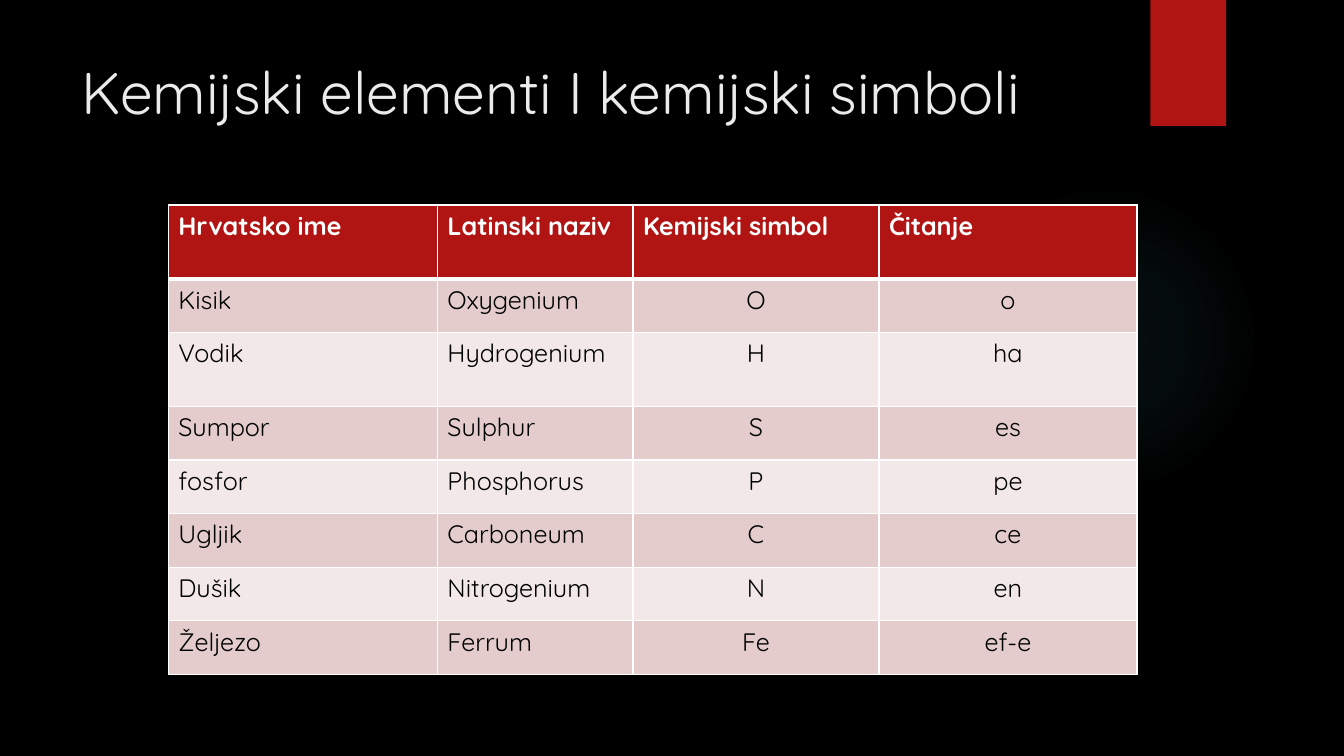
from typing import NamedTuple

from lxml import etree
from pptx import Presentation
from pptx import util as u
from pptx.dml.color import RGBColor
from pptx.enum import shapes, text
from pptx.oxml import ns

COLORS = {
    "background": "000000",
    "title": "EBEBEB",
    "accent": "B01513",
    "glow": "50B9C1",
    "white": "FFFFFF",
    "ink": "000000",
    "odd_row": "E4CCCC",
    "even_row": "F2E8E7",
}
FONT = "Quicksand"
COLUMN_WIDTHS = (192.25, 139.7, 175.7, 184.3)
TALL_ROW, ROW = 52.8, 38.3
TALL_ROWS = (0, 2)
CENTERED_COLUMNS = (2, 3)


class Element(NamedTuple):
    croatian: str
    latin: str
    symbol: str
    reading: str


HEADINGS = Element("Hrvatsko ime", "Latinski naziv", "Kemijski simbol", "Čitanje")
ELEMENTS = (
    Element("Kisik", "Oxygenium", "O", "o"),
    Element("Vodik", "Hydrogenium", "H", "ha"),
    Element("Sumpor", "Sulphur", "S", "es"),
    Element("fosfor", "Phosphorus", "P", "pe"),
    Element("Ugljik", "Carboneum", "C", "ce"),
    Element("Dušik", "Nitrogenium", "N", "en"),
    Element("Željezo", "Ferrum", "Fe", "ef-e"),
)


def color(name: str) -> RGBColor:
    return RGBColor.from_string(COLORS[name])


def add_node(parent, tag: str, **attributes):
    values = {key: str(value) for key, value in attributes.items()}
    return etree.SubElement(parent, ns.qn(tag), values)


def add_plain_shape(page, kind, left: float, top: float, width: float, height: float):
    box = page.shapes.add_shape(kind, u.Pt(left), u.Pt(top), u.Pt(width), u.Pt(height))
    box.shadow.inherit = False
    box.line.fill.background()
    return box


def add_glow(page) -> None:
    glow = add_plain_shape(page, shapes.MSO_SHAPE.OVAL, 677.5, 131.75, 221.75, 221.75)
    glow.fill.gradient()
    gradient = glow._element.spPr.find(ns.qn("a:gradFill"))
    for child in list(gradient):
        gradient.remove(child)
    stops = add_node(gradient, "a:gsLst")
    for position, opacity in ((0, 7), (36, 6), (69, 0)):
        stop = add_node(stops, "a:gs", pos=position * 1000)
        tint = add_node(stop, "a:srgbClr", val=COLORS["glow"])
        add_node(tint, "a:alpha", val=opacity * 1000)
    shade = add_node(gradient, "a:path", path="circle")
    add_node(shade, "a:fillToRect", l=50000, t=50000, r=50000, b=50000)


def add_title(page, wording: str) -> None:
    title = page.shapes.title
    title.left, title.top = u.Pt(51.1), u.Pt(36)
    title.width, title.height = u.Pt(740.9), u.Pt(110.2)
    frame = title.text_frame
    frame.word_wrap = True
    frame.auto_size = text.MSO_AUTO_SIZE.NONE
    frame.vertical_anchor = text.MSO_ANCHOR.TOP
    para = frame.paragraphs[0]
    para.text = wording
    para.alignment = text.PP_ALIGN.LEFT
    para.font.name, para.font.size = FONT, u.Pt(42)
    para.font.color.rgb = color("title")


def set_borders(cell, widths: dict[str, float]) -> None:
    properties = cell._tc.get_or_add_tcPr()
    for index, (side, width) in enumerate(widths.items()):
        line = add_node(properties, f"a:ln{side}", w=u.Pt(width))
        fill = add_node(line, "a:solidFill")
        add_node(fill, "a:srgbClr", val=COLORS["white"])
        properties.insert(index, line)


def fill_cell(cell, wording: str, row: int, column: int) -> None:
    header = row == 0
    cell.fill.solid()
    cell.fill.fore_color.rgb = color(
        "accent" if header else "odd_row" if row % 2 else "even_row")
    set_borders(cell, {"L": 1, "R": 1, "T": 3 if row == 1 else 1, "B": 3 if header else 1})
    para = cell.text_frame.paragraphs[0]
    para.text = wording
    centered = not header and column in CENTERED_COLUMNS
    para.alignment = text.PP_ALIGN.CENTER if centered else text.PP_ALIGN.LEFT
    para.font.name, para.font.size, para.font.bold = FONT, u.Pt(18), header
    para.font.color.rgb = color("white" if header else "ink")


def add_element_table(page) -> None:
    records = (HEADINGS, *ELEMENTS)
    heights = [TALL_ROW if row in TALL_ROWS else ROW for row in range(len(records))]
    table = page.shapes.add_table(
        len(records), len(COLUMN_WIDTHS), u.Pt(120.2), u.Pt(146.4),
        u.Pt(sum(COLUMN_WIDTHS)), u.Pt(sum(heights))).table
    for column, width in zip(table.columns, COLUMN_WIDTHS):
        column.width = u.Pt(width)
    for row, record in enumerate(records):
        table.rows[row].height = u.Pt(heights[row])
        for column, wording in enumerate(record):
            fill_cell(table.cell(row, column), wording, row, column)


def main() -> None:
    deck = Presentation()
    deck.slide_width, deck.slide_height = u.Pt(960), u.Pt(540)
    page = deck.slides.add_slide(deck.slide_layouts[5])
    page.background.fill.solid()
    page.background.fill.fore_color.rgb = color("background")

    # Background decoration
    add_glow(page)
    ribbon = add_plain_shape(page, shapes.MSO_SHAPE.RECTANGLE, 821.8, 0, 54, 90)
    ribbon.fill.solid()
    ribbon.fill.fore_color.rgb = color("accent")

    # Title and table of elements
    add_title(page, "Kemijski elementi I kemijski simboli")
    add_element_table(page)
    deck.save("out.pptx")


if __name__ == "__main__":
    main()
